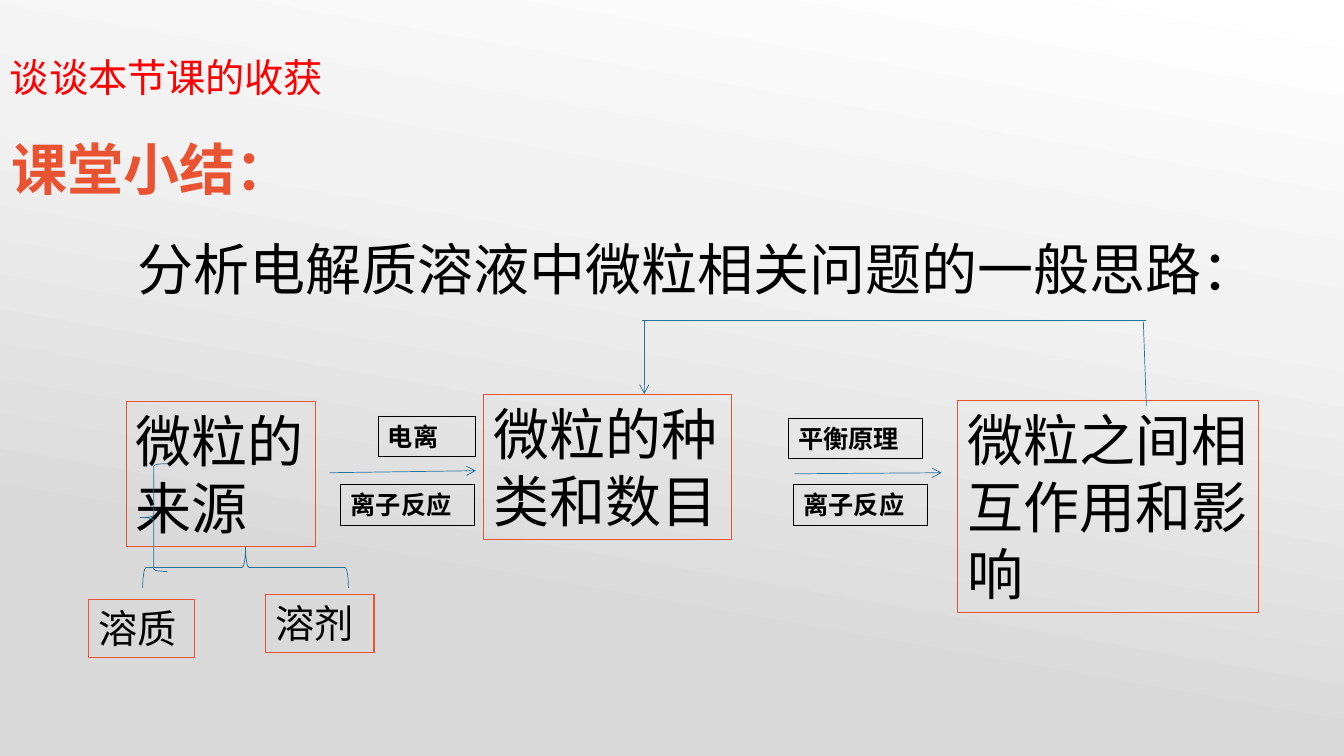
import copy

import pptx
import pptx.dml.color
import pptx.enum.shapes
import pptx.enum.text
import pptx.oxml
import pptx.oxml.ns
import pptx.util

WIDTH, HEIGHT = 13.33, 7.5
COLORS = {"red": "FF0000", "accent": "E95332", "text": "000000", "line": "2B7499"}
GRADIENT = [(0, "FFFFFF"), (0.34, "F2F2F2"), (0.76, "D9D9D9")]
LATIN, EAST_ASIAN = "Arial", "Noto Sans CJK SC"

TITLE = ("课堂小结：", 0, 1.28, 3.01, 0.77)
# text, left, top, width, height, size, colour
HEADINGS = [
    ("谈谈本节课的收获", 0, 0.48, 3.82, 0.57, 28, "red"),
    ("分析电解质溶液中微粒相关问题的一般思路：", 1.27, 2.28, 11.61, 0.77, 40, "text"),
]
# text, left, top, width, number of lines
STAGES = [
    ("微粒的来源", 1.25, 3.98, 1.88, 2),
    ("微粒的种类和数目", 4.8, 3.91, 2.46, 2),
    ("微粒之间相互作用和影响", 9.5, 3.97, 2.98, 3),
]
# text, left, top, width
SOURCES = [("溶质", 0.88, 5.95, 1.05), ("溶剂", 2.63, 5.9, 1.08)]
ARROW_LABELS = [
    ("电离", 3.75, 4.13, 0.97),
    ("离子反应", 3.38, 4.81, 1.33),
    ("平衡原理", 7.82, 4.15, 1.33),
    ("离子反应", 7.87, 4.81, 1.33),
]
# from x, from y, to x, to y, arrowhead
LINES = [
    (3.27, 4.69, 4.72, 4.67, True),
    (7.88, 4.7, 9.34, 4.69, True),
    (11.34, 3.19, 11.37, 4.03, False),
    (6.37, 3.18, 11.37, 3.18, False),
    (6.39, 3.18, 6.39, 3.91, True),
]
# left, top, width, height, rotation
BRACES = [(1.39, 4.6, 0.27, 1.07, 0), (2.23, 4.61, 0.41, 2.04, 90)]


def rgb(name):
    return pptx.dml.color.RGBColor.from_string(COLORS.get(name, name))


def inches(*values):
    return [pptx.util.Inches(v) for v in values]


def write(shape, text, size, color, bold=False, font=LATIN, align="LEFT", wrap=True):
    tf = shape.text_frame
    tf.word_wrap = wrap
    tf.auto_size = pptx.enum.text.MSO_AUTO_SIZE.NONE
    tf.vertical_anchor = pptx.enum.text.MSO_ANCHOR.TOP
    tf.margin_left = tf.margin_right = pptx.util.Inches(0.1)
    tf.margin_top = tf.margin_bottom = pptx.util.Inches(0.05)
    p = tf.paragraphs[0]
    p.alignment = getattr(pptx.enum.text.PP_ALIGN, align)
    r = p.add_run()
    r.text = text
    r.font.size = pptx.util.Pt(size)
    r.font.bold = bold
    r.font.color.rgb = rgb(color)
    r.font.name = font
    ea = pptx.oxml.parse_xml(
        f'<a:ea {pptx.oxml.ns.nsdecls("a")} typeface="{EAST_ASIAN}"/>')
    r.font._element.append(ea)


def add_outline(s, kind, box, color, weight):
    """Add an unfilled preset shape."""
    sp = s.shapes.add_shape(kind, *inches(*box))
    sp.shadow.inherit = False
    sp.fill.background()
    sp.line.color.rgb = rgb(color)
    sp.line.width = pptx.util.Pt(weight)
    return sp


def add_box(s, text, box, size, color, bold=False):
    sp = add_outline(s, pptx.enum.shapes.MSO_SHAPE.RECTANGLE, box, color, 0.75)
    write(sp, text, size, "text", bold)


def add_line(s, x1, y1, x2, y2, arrow):
    c = s.shapes.add_connector(
        pptx.enum.shapes.MSO_CONNECTOR.STRAIGHT, *inches(x1, y1, x2, y2))
    c.line.color.rgb = rgb("line")
    c.line.width = pptx.util.Pt(0.5)
    ns = pptx.oxml.ns.nsdecls("a")
    if arrow:
        ln = c.line._get_or_add_ln()
        ln.append(pptx.oxml.parse_xml(f'<a:tailEnd {ns} type="arrow"/>'))
    c._element.spPr.append(pptx.oxml.parse_xml(f"<a:effectLst {ns}/>"))


def paint_background(s):
    fill = s.background.fill
    fill.gradient()
    fill.gradient_angle = 260
    first = fill.gradient_stops[0]._gs
    first.addnext(copy.deepcopy(first))
    for stop, (position, color) in zip(fill.gradient_stops, GRADIENT):
        stop.position = position
        stop.color.rgb = rgb(color)


def main():
    prs = pptx.Presentation()
    prs.slide_width, prs.slide_height = inches(WIDTH, HEIGHT)
    s = prs.slides.add_slide(prs.slide_layouts[5])
    paint_background(s)

    text, *box = TITLE
    title = s.shapes.title
    title.left, title.top, title.width, title.height = inches(*box)
    write(title, text, 40, "accent", True, EAST_ASIAN, "CENTER", False)

    for text, *box, size, color in HEADINGS:
        write(s.shapes.add_textbox(*inches(*box)), text, size, color)
    for text, left, top, width, lines in STAGES:
        add_box(s, text, (left, top, width, 0.1 + 0.67 * lines), 40, "accent")
    for text, *box in SOURCES:
        add_box(s, text, (*box, 0.57), 28, "accent")
    for text, *box in ARROW_LABELS:
        add_box(s, text, (*box, 0.4), 18, "text", True)
    for line in LINES:
        add_line(s, *line)
    for *box, rotation in BRACES:
        brace = add_outline(s, pptx.enum.shapes.MSO_SHAPE.LEFT_BRACE, box, "line", 0.5)
        brace.rotation = rotation

    prs.save("out.pptx")


if __name__ == "__main__":
    main()
